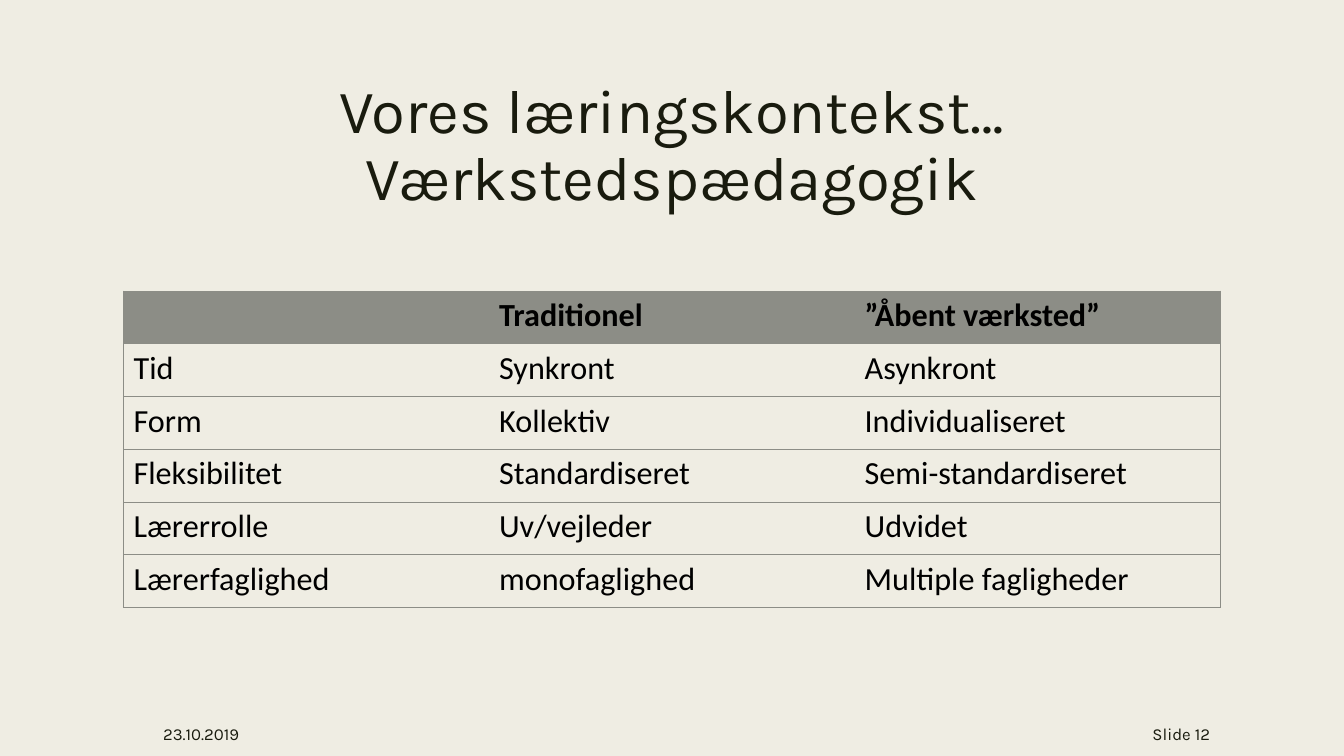
from lxml import etree
from pptx import Presentation
from pptx.dml.color import RGBColor
from pptx.enum.shapes import MSO_SHAPE
from pptx.enum.text import MSO_ANCHOR, PP_ALIGN
from pptx.oxml.ns import qn
from pptx.util import Pt

RECTANGLE = MSO_SHAPE.RECTANGLE
LEFT, CENTER, RIGHT = PP_ALIGN.LEFT, PP_ALIGN.CENTER, PP_ALIGN.RIGHT
TOP, MIDDLE = MSO_ANCHOR.TOP, MSO_ANCHOR.MIDDLE

PAGE_WIDTH, PAGE_HEIGHT = 960, 540
PAPER, INK, GREY, BLACK = "EFEDE3", "191B0E", "8C8D86", "000000"
HEADING_FONT, TABLE_FONT = "Karla", "Calibri"
ROWS = [
    ("", "Traditionel", "”Åbent værksted”"),
    ("Tid", "Synkront", "Asynkront"),
    ("Form", "Kollektiv", "Individualiseret"),
    ("Fleksibilitet", "Standardiseret", "Semi-standardiseret"),
    ("Lærerrolle", "Uv/vejleder", "Udvidet"),
    ("Lærerfaglighed", "monofaglighed", "Multiple fagligheder"),
]


def color(value):
    return RGBColor.from_string(value)


def paint(fill, value):
    fill.solid()
    fill.fore_color.rgb = color(value)


def style_font(font, name, size, value, bold=False):
    font.name = name
    font.size = Pt(size)
    font.bold = bold
    font.color.rgb = color(value)


def add_backdrop(page):
    paint(page.background.fill, PAPER)
    backdrop = page.shapes.add_shape(RECTANGLE, 0, 0, Pt(PAGE_WIDTH), Pt(PAGE_HEIGHT))
    backdrop.shadow.inherit = False
    backdrop.line.fill.background()
    paint(backdrop.fill, PAPER)


def add_text(page, text, left, top, width, height, size, align, anchor):
    box = page.shapes.add_textbox(Pt(left), Pt(top), Pt(width), Pt(height))
    frame = box.text_frame
    frame.word_wrap = True
    frame.vertical_anchor = anchor
    frame.text = text
    para = frame.paragraphs[0]
    para.alignment = align
    for span in para.runs:
        style_font(span.font, HEADING_FONT, size, INK)
    return para


def set_borders(cell, visible_sides):
    """Draw a thin grey line on the given sides (L, R, T, B) and none on the rest."""
    properties = cell._tc.get_or_add_tcPr()
    for side in "LRTB":
        line = etree.SubElement(properties, qn(f"a:ln{side}"), w=str(Pt(0.5)))
        if side in visible_sides:
            fill = etree.SubElement(line, qn("a:solidFill"))
            etree.SubElement(fill, qn("a:srgbClr"), val=GREY)
        else:
            etree.SubElement(line, qn("a:noFill"))


def fill_cell(cell, text, is_header):
    if is_header:
        paint(cell.fill, GREY)
    else:
        cell.fill.background()
    cell.text = text
    para = cell.text_frame.paragraphs[0]
    style_font(para.font, TABLE_FONT, 23, BLACK, is_header)
    for span in para.runs:
        style_font(span.font, TABLE_FONT, 23, BLACK, is_header)


def add_comparison_table(page, left, top, width, height):
    last_column = len(ROWS[0]) - 1
    frame = page.shapes.add_table(len(ROWS), len(ROWS[0]),
                                  Pt(left), Pt(top), Pt(width), Pt(height))
    table = frame.table
    table.horz_banding = False
    for row, texts in enumerate(ROWS):
        for column, text in enumerate(texts):
            cell = table.cell(row, column)
            outer = {0: "L", last_column: "R"}.get(column, "")
            set_borders(cell, "TB" + outer)
            fill_cell(cell, text, is_header=row == 0)


def main():
    deck = Presentation()
    deck.slide_width, deck.slide_height = Pt(PAGE_WIDTH), Pt(PAGE_HEIGHT)
    page = deck.slides.add_slide(deck.slide_layouts[6])
    add_backdrop(page)

    title = add_text(page, "Vores læringskontekst…\vVærkstedspædagogik",
                     50.6, 54, 859, 116.6, 44, CENTER, TOP)
    title.line_spacing = 0.9
    add_comparison_table(page, 88.2, 207.9, 783.3, 225.9)
    for text, left, width, align in (("23.10.2019", 109.4, 95, LEFT),
                                     ("Slide 12", 745.5, 126, RIGHT)):
        footer = add_text(page, text, left, 508.3, width, 31.7, 12, align, MIDDLE)
        footer.space_after = Pt(6)
    deck.save("out.pptx")


if __name__ == "__main__":
    main()
